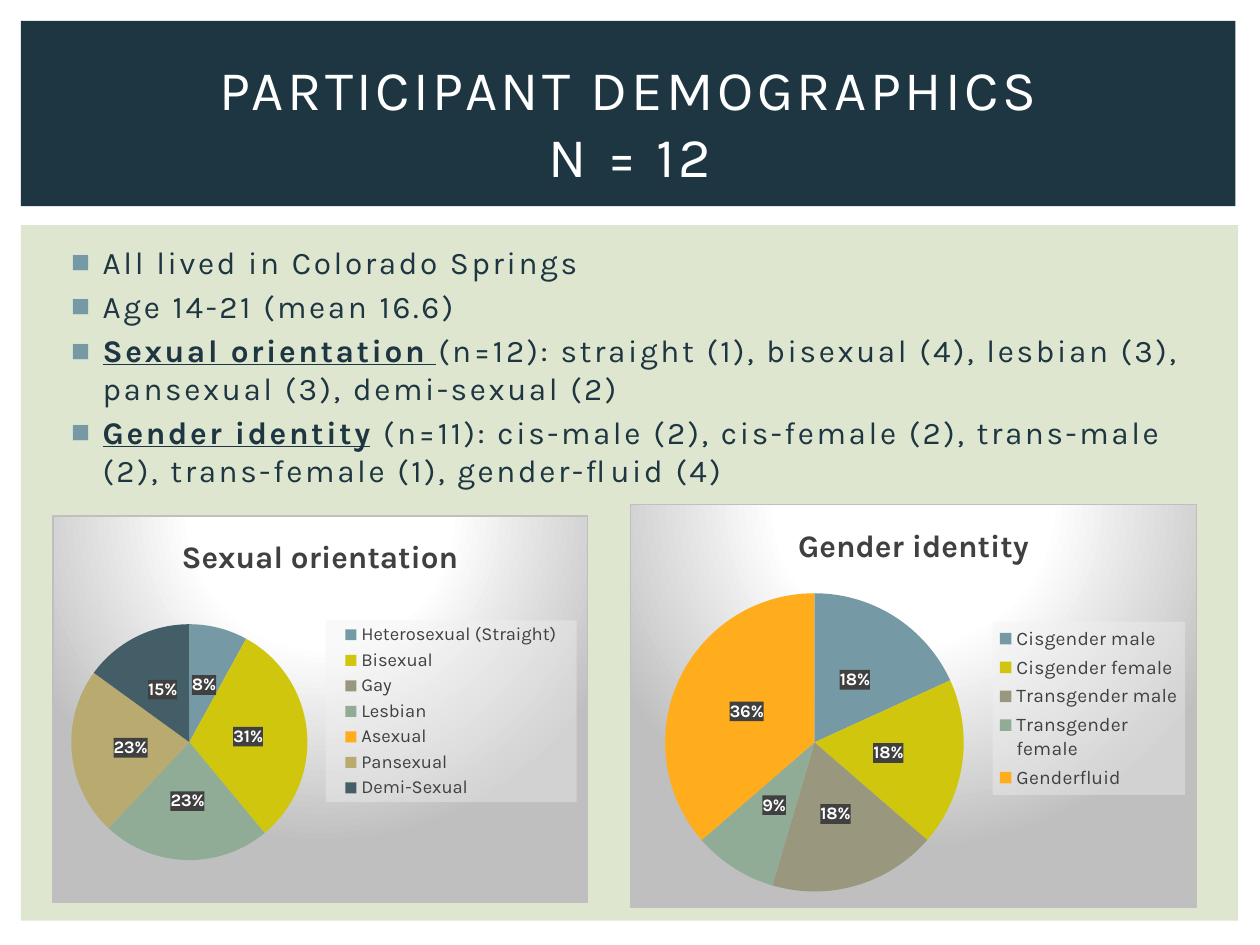
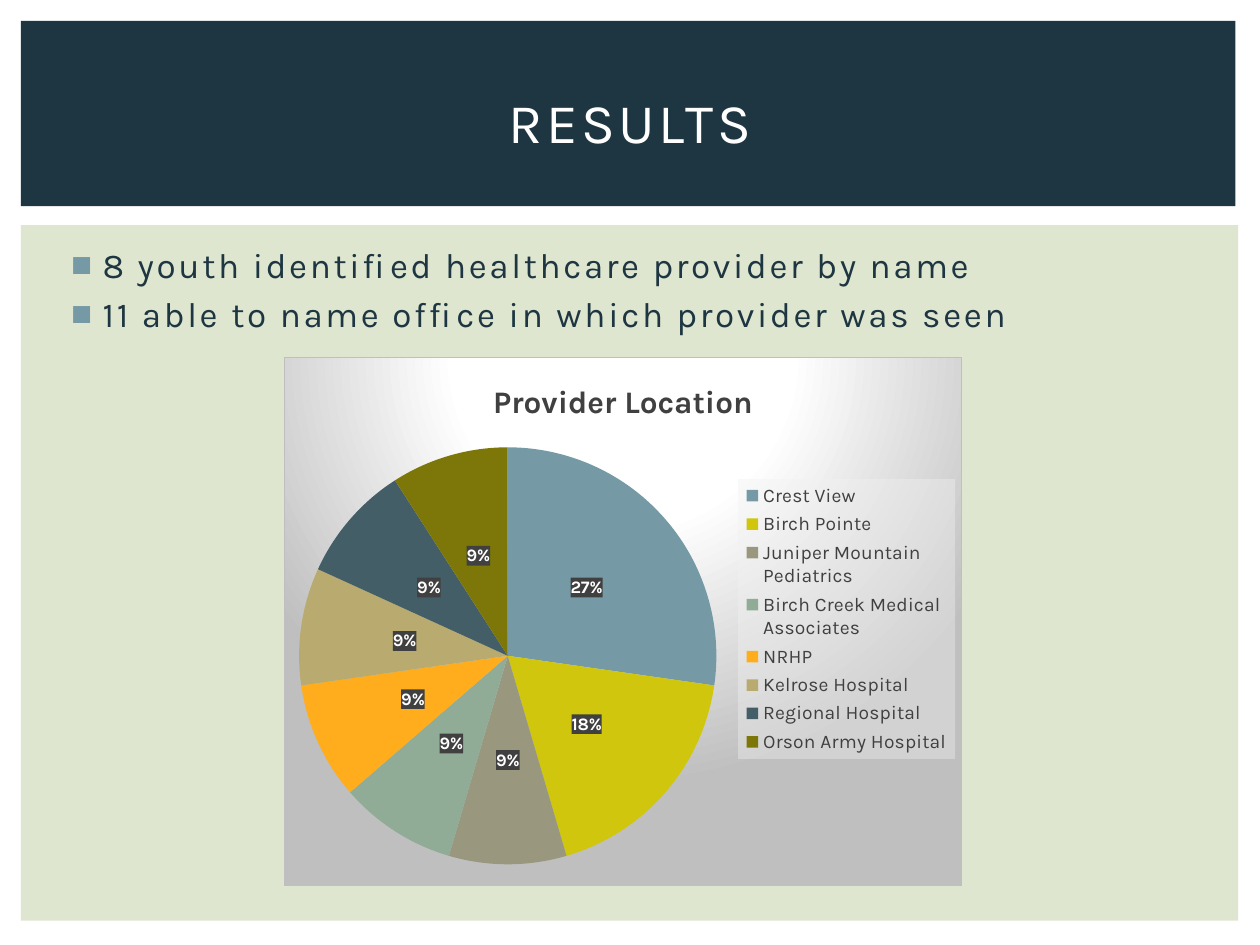
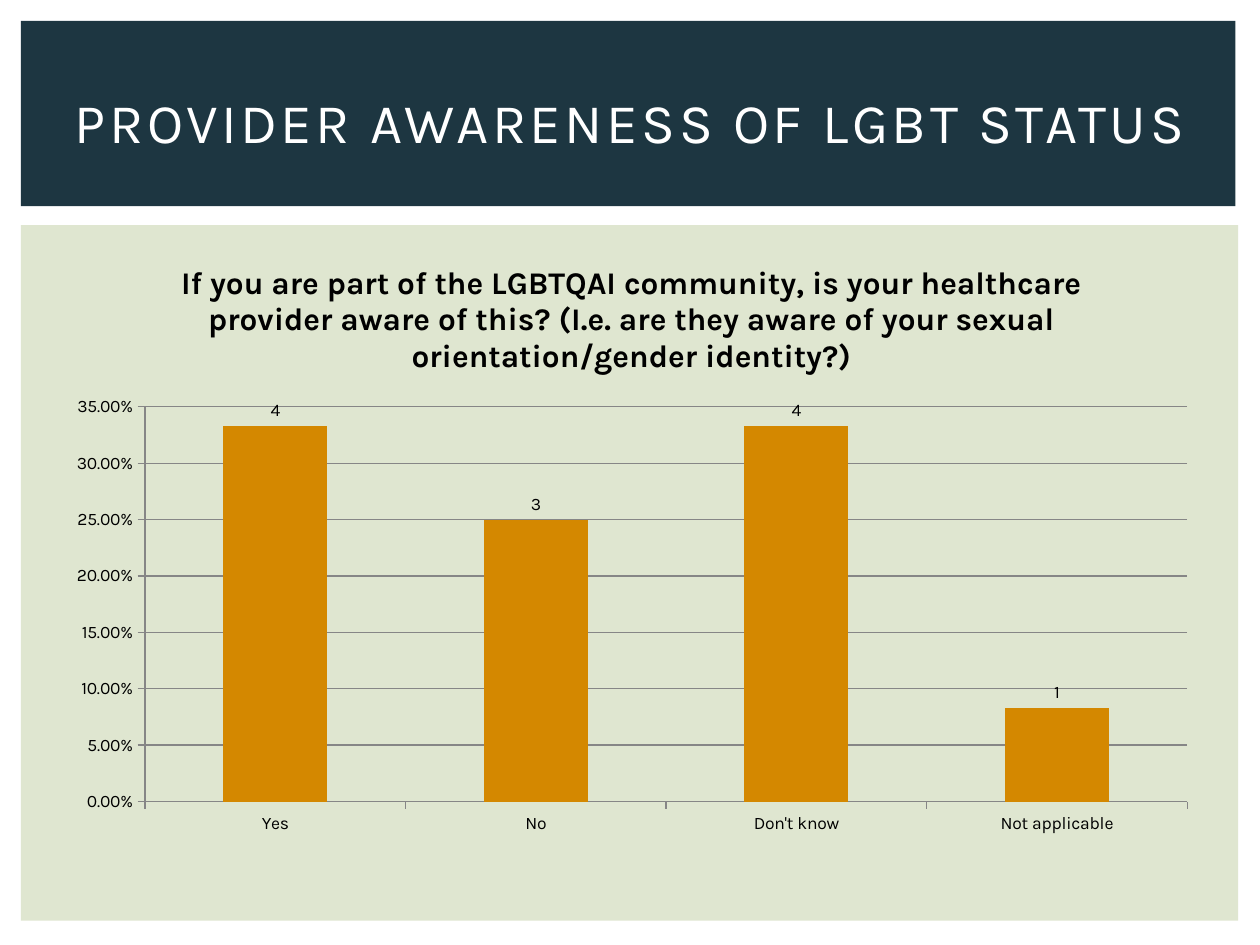
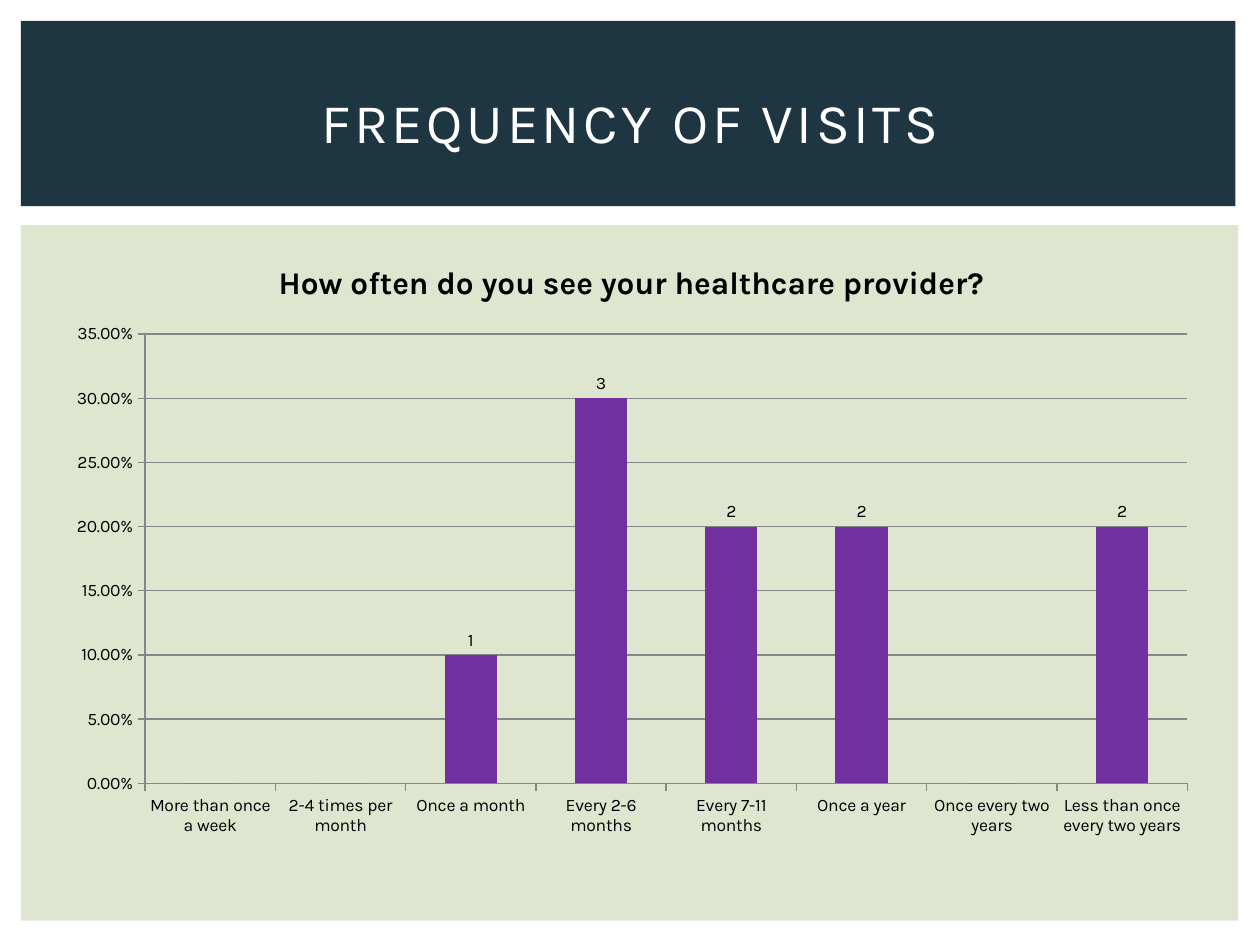
from copy import deepcopy

from pptx import Presentation
from pptx.chart.data import CategoryChartData
from pptx.dml.color import RGBColor
from pptx.enum.chart import (XL_CHART_TYPE, XL_LABEL_POSITION,
                             XL_LEGEND_POSITION, XL_TICK_MARK)
from pptx.enum.shapes import MSO_SHAPE
from pptx.enum.text import MSO_ANCHOR, MSO_AUTO_SIZE, PP_ALIGN
from pptx.oxml import parse_xml
from pptx.oxml.ns import nsdecls, qn
from pptx.util import Pt

PIE, COLUMN = XL_CHART_TYPE.PIE, XL_CHART_TYPE.COLUMN_CLUSTERED
MIDDLE, OUTER = XL_LABEL_POSITION.CENTER, XL_LABEL_POSITION.OUTSIDE_END
RIGHT, TICK = XL_LEGEND_POSITION.RIGHT, XL_TICK_MARK.OUTSIDE
RECT = MSO_SHAPE.RECTANGLE

FACE = "Karla"
HEX = {
    "navy": "1D3641", "sage": "DFE6D0", "blue": "759AA5", "white": "FFFFFF",
    "black": "000000", "dark": "404040", "pale": "F2F2F2", "edge": "BFBFBF",
    "rule": "868686", "amber": "D48800", "purple": "7030A0",
}
WEDGES = ["759AA5", "CFC60D", "99987F", "90AC97",
          "FFAD1C", "B9AB6F", "435E66", "7C7708"]

# Left, top, width and height in points
BANDS = {"sage": (12, 128.7, 695.5, 397.4),
         "navy": (12, 12, 694, 105.8)}
HEAD = (30, 28, 660.24, 82.8)
BODY = (30, 135.36, 661.68, 347.04)


def place(box):
    return [Pt(side) for side in box]


def tint(name):
    return RGBColor.from_string(HEX.get(name, name))


def style(font, color, **look):
    look = {"name": FACE, **look}
    for key, value in look.items():
        setattr(font, key, value)
    font.color.rgb = tint(color)


def paint(fill, color):
    fill.solid()
    fill.fore_color.rgb = tint(color)


def node(tag, inner):
    return parse_xml(f"<{tag} {nsdecls('a', 'c')}>{inner}</{tag}>")


def frame(box, inner=False):
    """Make a chart layout from fractions of the chart's size."""
    target = '<c:layoutTarget val="inner"/>' if inner else ""
    modes = "".join(f'<c:{s}Mode val="edge"/>' for s in "xy")
    sides = "".join(f'<c:{s} val="{v}"/>' for s, v in zip("xywh", box))
    return node("c:layout", f"<c:manualLayout>{target}{modes}{sides}"
                            "</c:manualLayout>")


def veil(color, alpha):
    """Make a see-through fill; alpha is a percentage."""
    return node("c:spPr", f'<a:solidFill><a:srgbClr val="{HEX[color]}">'
                          f'<a:alpha val="{alpha * 1000}"/></a:srgbClr>'
                          "</a:solidFill>")


def glow():
    stops = "".join(
        f'<a:gs pos="{at * 1000}"><a:srgbClr val="{HEX[name]}"/></a:gs>'
        for at, name in ((0, "white"), (39, "white"), (100, "edge")))
    return node("c:spPr", f"""<a:gradFill><a:gsLst>{stops}</a:gsLst>
        <a:path path="circle"><a:fillToRect l="50000" t="-80000" r="50000"
        b="180000"/></a:path></a:gradFill><a:ln w="9525"><a:solidFill>
        <a:srgbClr val="{HEX['edge']}"/></a:solidFill></a:ln>""")


class Deck:
    def __init__(self):
        self.file = Presentation()
        self.file.slide_width, self.file.slide_height = Pt(720), Pt(540)
        self.layout = self.file.slide_layouts[5]
        self.slide = None

    def bands(self):
        """Move the two bands to the layout, behind every slide."""
        for spot, (color, box) in enumerate(BANDS.items()):
            band = self.slide.shapes.add_shape(RECT, *place(box))
            band.shadow.inherit = False
            paint(band.fill, color)
            band.line.fill.background()
            band.element.nvSpPr.cNvPr.id = 90 + spot
            self.layout.shapes.element.insert(2 + spot, band.element)

    def page(self, text):
        first = self.slide is None
        self.slide = self.file.slides.add_slide(self.layout)
        if first:
            self.bands()
        title = self.slide.shapes.title
        title.left, title.top, title.width, title.height = place(HEAD)
        words = title.text_frame
        words.text = text
        words.auto_size = MSO_AUTO_SIZE.NONE
        words.vertical_anchor = MSO_ANCHOR.MIDDLE
        line = words.paragraphs[0]
        line.alignment = PP_ALIGN.CENTER
        for run in line.runs:
            style(run.font, "white", size=Pt(32))
        self.space(title, 2)
        look = next(title.element.iter(qn("a:rPr")))
        for gap in title.element.iter(qn("a:br")):
            gap.append(deepcopy(look))

    def space(self, shape, points):
        for look in shape.element.iter(qn("a:rPr")):
            look.set("spc", str(int(points * 100)))

    def bullets(self, size, rows):
        """Each row is a pair: an underlined lead and the plain rest."""
        box = self.slide.shapes.add_textbox(*place(BODY))
        words = box.text_frame
        words.word_wrap = True
        for spot, row in enumerate(rows):
            line = words.add_paragraph() if spot else words.paragraphs[0]
            line.space_before = Pt(size * 0.2)
            for text, lead in zip(row, (True, False)):
                if text:
                    run = line.add_run()
                    run.text = text
                    style(run.font, "navy", size=Pt(size), bold=lead,
                          underline=lead)
        self.space(box, 1.5)
        for form in box.element.iter(qn("a:pPr")):
            form.set("marL", str(Pt(21.6)))
            form.set("indent", str(Pt(-18)))
            form.append(node("a:buClr", f'<a:srgbClr val="{HEX["blue"]}"/>'))
            for mark in ('buFont {} typeface="Arial"', 'buChar {} char="■"'):
                form.append(parse_xml(f"<a:{mark.format(nsdecls('a'))}/>"))

    def chart(self, kind, box, title, data, color, plot):
        """Add a titled chart of one series, with its plot area placed."""
        table = CategoryChartData()
        table.categories = list(data)
        table.add_series("Series 1", list(data.values()))
        chart = self.slide.shapes.add_chart(kind, *place(box), table).chart
        style(chart.font, "black", size=Pt(10))
        chart.has_title = True
        words = chart.chart_title.text_frame
        words.text = title
        style(words.paragraphs[0].runs[0].font, color, size=Pt(18), bold=True)
        area = chart.element.find(".//" + qn("c:plotArea"))
        for old in area.findall(qn("c:layout")):
            area.remove(old)
        area.insert(0, frame(plot, inner=True))
        return chart

    def hide(self, chart, values):
        """Drop the labels of points whose value is zero."""
        points = chart.plots[0].series[0].points
        blank = [i for i, value in enumerate(values) if not value]
        for i in blank:
            points[i].data_label.position = MIDDLE
        for label in list(chart.element.iter(qn("c:dLbl"))):
            if int(label.find(qn("c:idx")).get("val")) in blank:
                for child in list(label)[1:]:
                    label.remove(child)
                label.append(parse_xml(
                    f'<c:delete {nsdecls("c")} val="1"/>'))

    def pie(self, box, title, data, plot, key, size=11):
        chart = self.chart(PIE, box, title, data, "dark", plot)
        chart.plots[0].vary_by_categories = True
        series = chart.plots[0].series[0]
        for i, color in enumerate(WEDGES[:len(data)]):
            wedge = series.points[i].format
            paint(wedge.fill, color)
            wedge.line.fill.background()
        labels = series.data_labels
        form = {"show_percentage": True, "show_value": False,
                "number_format": "0%", "number_format_is_linked": False,
                "position": MIDDLE}
        for name, value in form.items():
            setattr(labels, name, value)
        style(labels.font, "white", size=Pt(10), bold=True)
        self.hide(chart, data.values())

        chart.has_legend = True
        legend = chart.legend
        legend.position, legend.include_in_layout = RIGHT, False
        style(legend.font, "dark", size=Pt(size))

        root = chart.element
        root.find(".//" + qn("c:dLbls")).find(qn("c:txPr")).addprevious(
            veil("dark", 75))
        part = root.find(".//" + qn("c:legend"))
        part.find(qn("c:legendPos")).addnext(frame(key))
        part.find(qn("c:txPr")).addprevious(veil("pale", 39))
        root.find(qn("c:chart")).addnext(glow())
        if root.find(qn("c:roundedCorners")) is None:
            root.insert(0, parse_xml(
                f'<c:roundedCorners {nsdecls("c")} val="0"/>'))

    def columns(self, title, data, counts, color, plot, code):
        chart = self.chart(COLUMN, BODY, title, data, "black", plot)
        chart.has_legend = False
        bars = chart.plots[0]
        bars.gap_width, bars.vary_by_categories = 150, False
        series = bars.series[0]
        paint(series.format.fill, color)
        labels = series.data_labels
        labels.show_value, labels.position = True, OUTER
        labels.number_format, labels.number_format_is_linked = code, False
        style(labels.font, "black", size=Pt(10))
        for i, count in enumerate(counts):
            if count:
                label = series.points[i].data_label
                label.text_frame.text = str(count)
                label.position = OUTER
                run = label.text_frame.paragraphs[0].runs[0]
                style(run.font, "black", size=Pt(10))
        self.hide(chart, counts)

        scale = chart.value_axis
        scale.minimum_scale, scale.maximum_scale = 0, 0.35
        scale.major_unit, scale.has_major_gridlines = 0.05, True
        ticks = scale.tick_labels
        ticks.number_format, ticks.number_format_is_linked = "0.00%", False
        for axis in (scale, chart.category_axis):
            axis.major_tick_mark = TICK
            style(axis.tick_labels.font, "black", size=Pt(10))
        for part in (scale, chart.category_axis, scale.major_gridlines):
            part.format.line.color.rgb = tint("rule")
            part.format.line.width = Pt(0.75)


def main():
    deck = Deck()

    deck.page("PARTICIPANT DEMOGRAPHICS\vN = 12")
    deck.bullets(18, [
        ("", "All lived in Colorado Springs"),
        ("", "Age 14-21 (mean 16.6)"),
        ("Sexual orientation ", "(n=12): straight (1), bisexual (4), "
         "lesbian (3), pansexual (3), demi-sexual (2)"),
        ("Gender identity", " (n=11): cis-male (2), cis-female (2), "
         "trans-male (2), trans-female (1), gender-fluid (4)"),
    ])
    deck.pie((30, 294.5, 306, 221.76), "Sexual orientation",
             {"Heterosexual (Straight)": 8, "Bisexual": 31, "Gay": 0,
              "Lesbian": 23, "Asexual": 0, "Pansexual": 23,
              "Demi-Sexual": 15},
             plot=(0.03, 0.28, 0.45, 0.61), key=(0.51, 0.27, 0.47, 0.47),
             size=10.5)
    deck.pie((360, 288, 324, 231.12), "Gender identity",
             {"Cisgender male": 18, "Cisgender female": 18,
              "Transgender male": 18, "Transgender female": 9,
              "Genderfluid": 36},
             plot=(0.06, 0.22, 0.53, 0.74), key=(0.64, 0.29, 0.34, 0.43))

    deck.page("RESULTS")
    deck.bullets(20, [
        ("", "8 youth identified healthcare provider by name"),
        ("", "11 able to name office in which provider was seen"),
    ])
    deck.pie((162, 204, 388, 302.4), "Provider Location",
             {"Crest View": 27, "Birch Pointe": 18,
              "Juniper Mountain Pediatrics": 9,
              "Birch Creek Medical Associates": 9, "NRHP": 9,
              "Kelrose Hospital": 9, "Regional Hospital": 9,
              "Orson Army Hospital": 9},
             plot=(0.02, 0.17, 0.62, 0.79), key=(0.67, 0.23, 0.32, 0.53))

    deck.page("PROVIDER AWARENESS OF LGBT STATUS")
    deck.columns("If you are part of the LGBTQAI community, is your "
                 "healthcare provider aware of this? (I.e. are they aware "
                 "of your sexual orientation/gender identity?)",
                 {"Yes": 0.3333, "No": 0.25, "Don't know": 0.3333,
                  "Not applicable": 0.0833},
                 (4, 3, 4, 1), "amber", (0.08, 0.28, 0.9, 0.65), "General")

    deck.page("FREQUENCY OF VISITS")
    deck.columns("How often do you see your healthcare provider?",
                 {"More than once a week": 0, "2-4 times per month": 0,
                  "Once a month": 0.1, "Every 2-6 months": 0.3,
                  "Every 7-11 months": 0.2, "Once a year": 0.2,
                  "Once every two years": 0,
                  "Less than once every two years": 0.2},
                 (0, 0, 1, 3, 2, 2, 0, 2), "purple",
                 (0.08, 0.16, 0.9, 0.74), "0.00%")

    deck.file.save("out.pptx")


if __name__ == "__main__":
    main()
